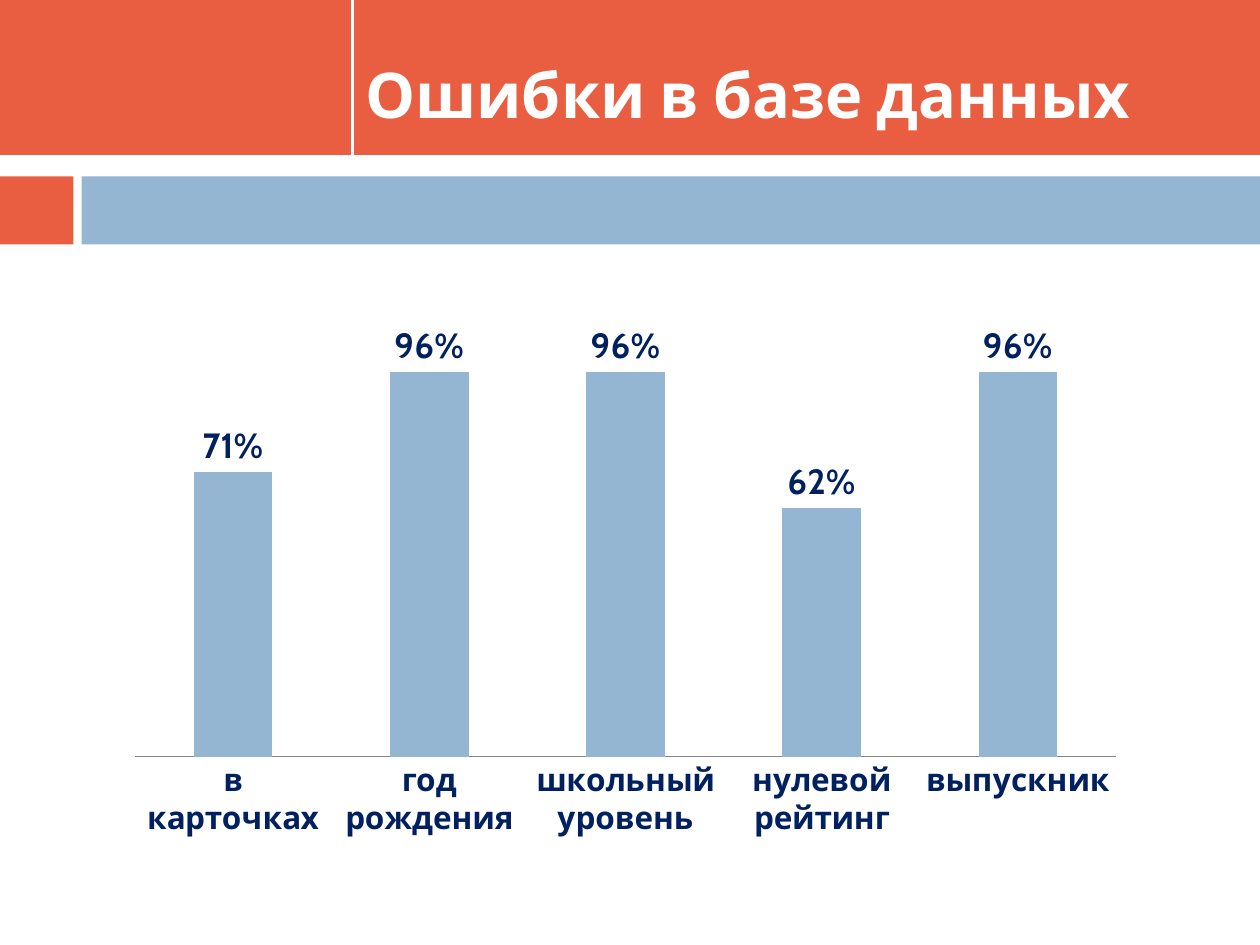
import pptx
import pptx.chart.data
import pptx.dml.color
import pptx.enum.chart
import pptx.enum.shapes
import pptx.enum.text
import pptx.oxml.ns
import pptx.oxml.xmlchemy
import pptx.util

Pt = pptx.util.Pt
ORANGE, BLUE, NAVY, WHITE = "E95E40", "94B6D2", "002060", "FFFFFF"
FONT = "Cabin"


def rgb(color):
    return pptx.dml.color.RGBColor.from_string(color)


def style_font(font, size, color):
    font.name = FONT
    font.size = Pt(size)
    font.bold = True
    font.color.rgb = rgb(color)


presentation = pptx.Presentation()
presentation.slide_width = Pt(720)
presentation.slide_height = Pt(540)
slide = presentation.slides.add_slide(presentation.slide_layouts[5])

# Header bands
HEADER_HEIGHT = 88.6
bands = [
    (0, 0, 720, HEADER_HEIGHT, ORANGE),
    (0, 97.2, 720, 25.2, WHITE),
    (0, 100.8, 42, 38.9, ORANGE),
    (46.6, 100.8, 673.4, 38.9, BLUE),
]
for left, top, width, height, color in bands:
    band = slide.shapes.add_shape(
        pptx.enum.shapes.MSO_SHAPE.RECTANGLE, Pt(left), Pt(top), Pt(width), Pt(height))
    band.shadow.inherit = False
    band.fill.solid()
    band.fill.fore_color.rgb = rgb(color)
    band.line.fill.background()

DIVIDER_LEFT = 201.6
divider = slide.shapes.add_connector(
    pptx.enum.shapes.MSO_CONNECTOR.STRAIGHT,
    Pt(DIVIDER_LEFT), Pt(0), Pt(DIVIDER_LEFT), Pt(HEADER_HEIGHT))
divider.line.color.rgb = rgb(WHITE)
divider.line.width = Pt(1.5)
divider._element.spPr.append(pptx.oxml.xmlchemy.OxmlElement("a:effectLst"))

# Error rates
error_rates = pptx.chart.data.CategoryChartData(number_format='0"%"')
error_rates.categories = [
    "в карточках", "год рождения", "школьный уровень", "нулевой рейтинг", "выпускник"]
error_rates.add_series("Series 1", [71, 96, 96, 62, 96])
chart = slide.shapes.add_chart(
    pptx.enum.chart.XL_CHART_TYPE.COLUMN_CLUSTERED,
    Pt(65.5), Pt(151.2), Pt(583.9), Pt(334.8), error_rates).chart
chart.has_legend = False
chart.has_title = False
chart.font.name = FONT
chart.font.size = Pt(10)
chart.font.color.rgb = rgb("000000")

category_axis = chart.category_axis
category_axis.major_tick_mark = pptx.enum.chart.XL_TICK_MARK.NONE
category_axis.format.line.color.rgb = rgb("868686")
category_axis.format.line.width = Pt(0.75)
style_font(category_axis.tick_labels.font, 18, NAVY)

value_axis = chart.value_axis
value_axis.visible = False
value_axis.has_major_gridlines = False
value_axis.minimum_scale = 0
value_axis.maximum_scale = 120

columns = chart.plots[0]
columns.vary_by_categories = False
columns.gap_width = 150
columns.overlap = -25
columns.series[0].format.fill.solid()
columns.series[0].format.fill.fore_color.rgb = rgb(BLUE)
columns.has_data_labels = True
labels = columns.data_labels
labels.show_value = True
labels.number_format = '0"%"'
labels.number_format_is_linked = False
labels.position = pptx.enum.chart.XL_LABEL_POSITION.OUTSIDE_END
style_font(labels.font, 20, NAVY)

# Fixed plot area, as fractions of the chart
plot_area = chart._chartSpace.chart.plotArea
for old_layout in plot_area.findall(pptx.oxml.ns.qn("c:layout")):
    plot_area.remove(old_layout)
layout = pptx.oxml.xmlchemy.OxmlElement("c:layout")
manual = pptx.oxml.xmlchemy.OxmlElement("c:manualLayout")
layout.append(manual)
for tag, value in [("layoutTarget", "inner"), ("xMode", "edge"), ("yMode", "edge"),
                   ("x", "0.02"), ("y", "0.02"), ("w", "0.96"), ("h", "0.82")]:
    setting = pptx.oxml.xmlchemy.OxmlElement("c:" + tag)
    setting.set("val", value)
    manual.append(setting)
plot_area.insert(0, layout)

# Title, brought in front of the bands
title = slide.shapes.title
title.left, title.top = Pt(DIVIDER_LEFT), Pt(18)
title.width, title.height = Pt(488.9), Pt(70.6)
title.text_frame.text = "Ошибки в базе данных"
title.text_frame.word_wrap = True
title.text_frame.vertical_anchor = pptx.enum.text.MSO_ANCHOR.MIDDLE
heading = title.text_frame.paragraphs[0]
heading.alignment = pptx.enum.text.PP_ALIGN.LEFT
style_font(heading.runs[0].font, 36, WHITE)
slide.shapes._spTree.append(title._element)

presentation.save("out.pptx")
